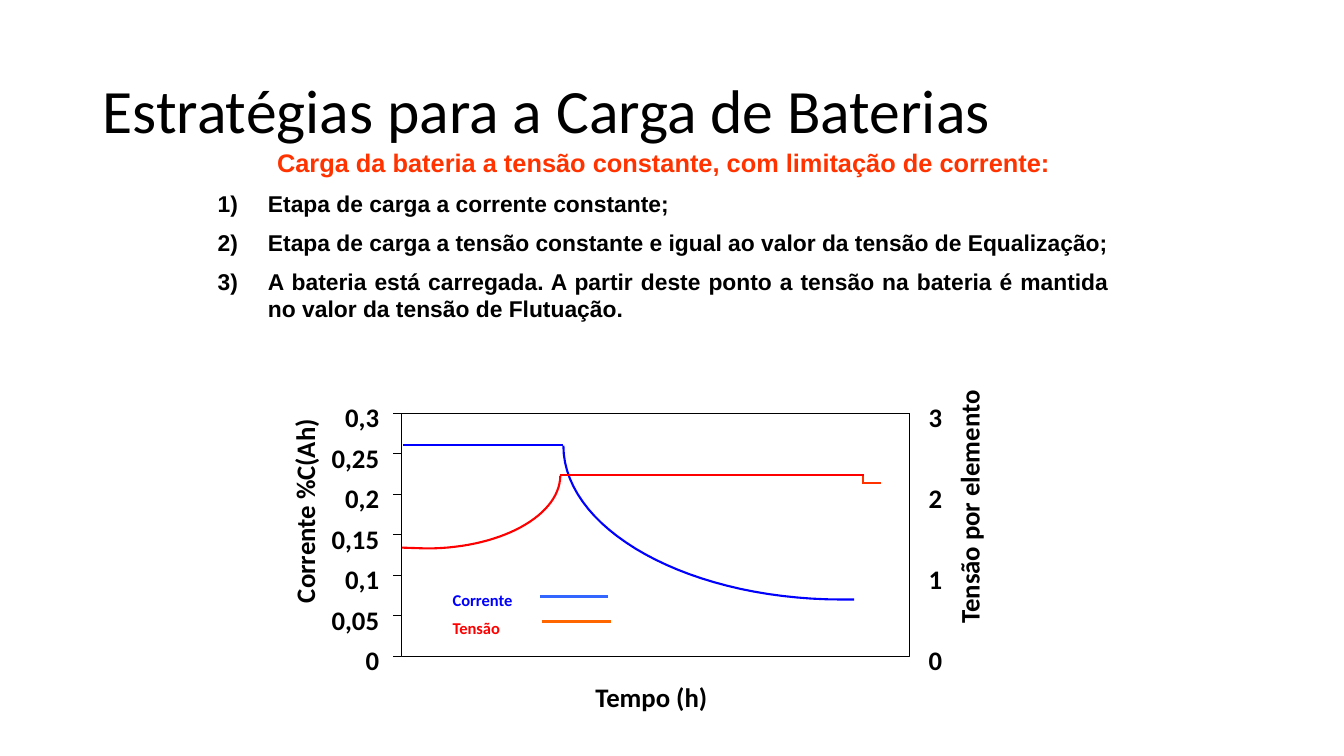
from lxml import etree
from pptx import Presentation
from pptx.dml.color import RGBColor
from pptx.enum.shapes import MSO_CONNECTOR, MSO_SHAPE
from pptx.enum.text import MSO_ANCHOR, PP_ALIGN
from pptx.oxml.ns import qn
from pptx.util import Inches, Pt

LEFT, CENTER, RIGHT, JUSTIFY = PP_ALIGN.LEFT, PP_ALIGN.CENTER, PP_ALIGN.RIGHT, PP_ALIGN.JUSTIFY
COLORS = {
    "black": "000000", "heading": "FF3300", "current": "0000FF", "voltage": "FF0000",
    "current_key": "3366FF", "voltage_key": "FF6600", "float": "FF3300",
}

TITLE = "Estratégias para a Carga de Baterias"
HEADING = "Carga da bateria a tensão constante, com limitação de corrente:"
STEPS = [
    "Etapa de carga a corrente constante;",
    "Etapa de carga a tensão constante e igual ao valor da tensão de Equalização;",
    "A bateria está carregada. A partir deste ponto a tensão na bateria é mantida "
    "no valor da tensão de Flutuação.",
]
CURRENT_SCALE = ["0", "0,05", "0,1", "0,15", "0,2", "0,25", "0,3"]
VOLTAGE_SCALE = ["0", "1", "2", "3"]
# text, left, top, width, rotation
AXIS_TITLES = [
    ("Tempo (h)", 5.86, 6.75, 1.2, 0),
    ("Corrente %C(Ah)", 2.07, 4.91, 1.9, 270),
    ("Tensão por elemento", 8.41, 4.87, 2.4, 270),
]
LEGEND = [("Corrente", "current"), ("Tensão", "voltage")]

# Plot points are (percent of time, volts per element or tenths of C)
CURRENT_CURVE = [(31.9, 2.6), (31.9, 1.56), (56.5, 0.7), (86.7, 0.7)]
CURRENT_END = (89.1, 0.7)
VOLTAGE_CURVE = [(5, 1.33), (19.4, 1.33), (31.2, 1.73), (31.3, 2.23)]
VOLTAGE_START = (0, 1.34)
# start, end, colour, width
PLOT_LINES = [
    ((0, 0), (0, 3), "black", 0.75),
    ((100, 0), (100, 3), "black", 0.75),
    ((0.4, 2.61), (31.9, 2.61), "current", 1.5),
    ((31.2, 2.24), (91, 2.24), "voltage", 1.5),
    ((90.9, 2.23), (90.9, 2.14), "float", 1.5),
    ((90.7, 2.14), (94.4, 2.14), "float", 1.5),
    ((27.4, 0.74), (40.7, 0.74), "current_key", 2),
    ((27.6, 0.43), (41.3, 0.43), "voltage_key", 2),
]

PLOT_LEFT, PLOT_TOP, PLOT_WIDTH, PLOT_HEIGHT = 3.98, 4.1, 5.04, 2.41
TOP_VALUE = 3
TICK = 1.6
LABEL_HEIGHT = 0.32
LABEL_SIZE = 19.1
CURVE_STEPS = 30

presentation = Presentation()
presentation.slide_width, presentation.slide_height = Inches(13.33), Inches(7.5)
slide = presentation.slides.add_slide(presentation.slide_layouts[6])
shapes = slide.shapes


def color(name):
    return RGBColor.from_string(COLORS[name])


def plot_point(point):
    """Turn percent of time and axis value into slide lengths."""
    time, value = point
    return (Inches(PLOT_LEFT + PLOT_WIDTH * time / 100),
            Inches(PLOT_TOP + PLOT_HEIGHT * (1 - value / TOP_VALUE)))


def outline(shape, color_name, width):
    shape.line.color.rgb = color(color_name)
    shape.line.width = Pt(width)


def add_line(start, end, color_name="black", width=0.75):
    line = shapes.add_connector(MSO_CONNECTOR.STRAIGHT, *plot_point(start), *plot_point(end))
    outline(line, color_name, width)
    etree.SubElement(line._element.spPr, qn("a:effectLst"))


def bezier(controls):
    def blend(t, axis):
        a, b, c, d = (control[axis] for control in controls)
        s = 1 - t
        return a * s**3 + 3 * b * s * s * t + 3 * c * s * t * t + d * t**3

    steps = [i / CURVE_STEPS for i in range(CURVE_STEPS + 1)]
    return [(blend(t, 0), blend(t, 1)) for t in steps]


def add_curve(points, color_name):
    places = [plot_point(point) for point in points]
    builder = shapes.build_freeform(*places[0])
    builder.add_line_segments(places[1:], close=False)
    curve = builder.convert_to_shape()
    curve.shadow.inherit = False
    curve.fill.background()
    outline(curve, color_name, 1.5)


def add_text(box, inset=True, wrap=True):
    text_box = shapes.add_textbox(*(Inches(length) for length in box))
    frame = text_box.text_frame
    frame.word_wrap = wrap
    if not inset:
        frame.margin_left = frame.margin_right = frame.margin_top = frame.margin_bottom = 0
    return text_box


def write(paragraph, text, size, color_name="black", font="Calibri", bold=True, align=LEFT):
    paragraph.text = text
    paragraph.alignment = align
    style = paragraph.runs[0].font
    style.name, style.size, style.bold = font, Pt(size), bold
    style.color.rgb = color(color_name)


def add_label(text, left, top, width, align, rotation=0):
    label = add_text((left, top, width, LABEL_HEIGHT), inset=False, wrap=False)
    label.rotation = rotation
    write(label.text_frame.paragraphs[0], text, LABEL_SIZE, align=align)


def add_scale(texts, left, width, align):
    gap = PLOT_HEIGHT / (len(texts) - 1)
    for i, text in enumerate(texts):
        add_label(text, left, PLOT_TOP + PLOT_HEIGHT - i * gap - 0.12, width, align)


# Axes and scales
frame = shapes.add_shape(MSO_SHAPE.RECTANGLE, Inches(PLOT_LEFT), Inches(PLOT_TOP),
                         Inches(PLOT_WIDTH), Inches(PLOT_HEIGHT))
frame.shadow.inherit = False
frame.fill.background()
outline(frame, "black", 0.75)
for i in range(len(CURRENT_SCALE)):
    value = TOP_VALUE * i / (len(CURRENT_SCALE) - 1)
    add_line((-TICK, value), (0, value))
add_scale(CURRENT_SCALE, 3.21, 0.55, RIGHT)
add_scale(VOLTAGE_SCALE, 9.21, 0.16, LEFT)
for text, left, top, width, rotation in AXIS_TITLES:
    add_label(text, left, top, width, CENTER, rotation)

# Charge curves and legend
add_curve(bezier(CURRENT_CURVE) + [CURRENT_END], "current")
add_curve([VOLTAGE_START] + bezier(VOLTAGE_CURVE), "voltage")
for plot_line in PLOT_LINES:
    add_line(*plot_line)
legend = add_text((4.39, 5.8, 1.89, 0.6)).text_frame
for i, (text, color_name) in enumerate(LEGEND):
    paragraph = legend.add_paragraph() if i else legend.paragraphs[0]
    write(paragraph, text, 11.8, color_name)
    paragraph.space_before = Pt(5.9 if i else 0)

# Heading and numbered steps
body = add_text((2.06, 1.41, 9.04, 2.19)).text_frame
write(body.paragraphs[0], HEADING, 18.1, "heading", "Arial", align=CENTER)
for step in STEPS:
    paragraph = body.add_paragraph()
    write(paragraph, step, 16.3, font="Arial", align=JUSTIFY)
    paragraph.space_before = Pt(8.4)
    etree.SubElement(paragraph._p.get_or_add_pPr(), qn("a:buAutoNum"), type="arabicParenR")
for paragraph in body.paragraphs:
    properties = paragraph._p.get_or_add_pPr()
    properties.set("marL", str(Inches(0.5)))
    properties.set("indent", str(-Inches(0.5)))

title = add_text((0.92, 0.4, 11.5, 1.45)).text_frame
title.vertical_anchor = MSO_ANCHOR.MIDDLE
write(title.paragraphs[0], TITLE, 44, bold=False)
title.paragraphs[0].line_spacing = 0.9

presentation.save("out.pptx")
